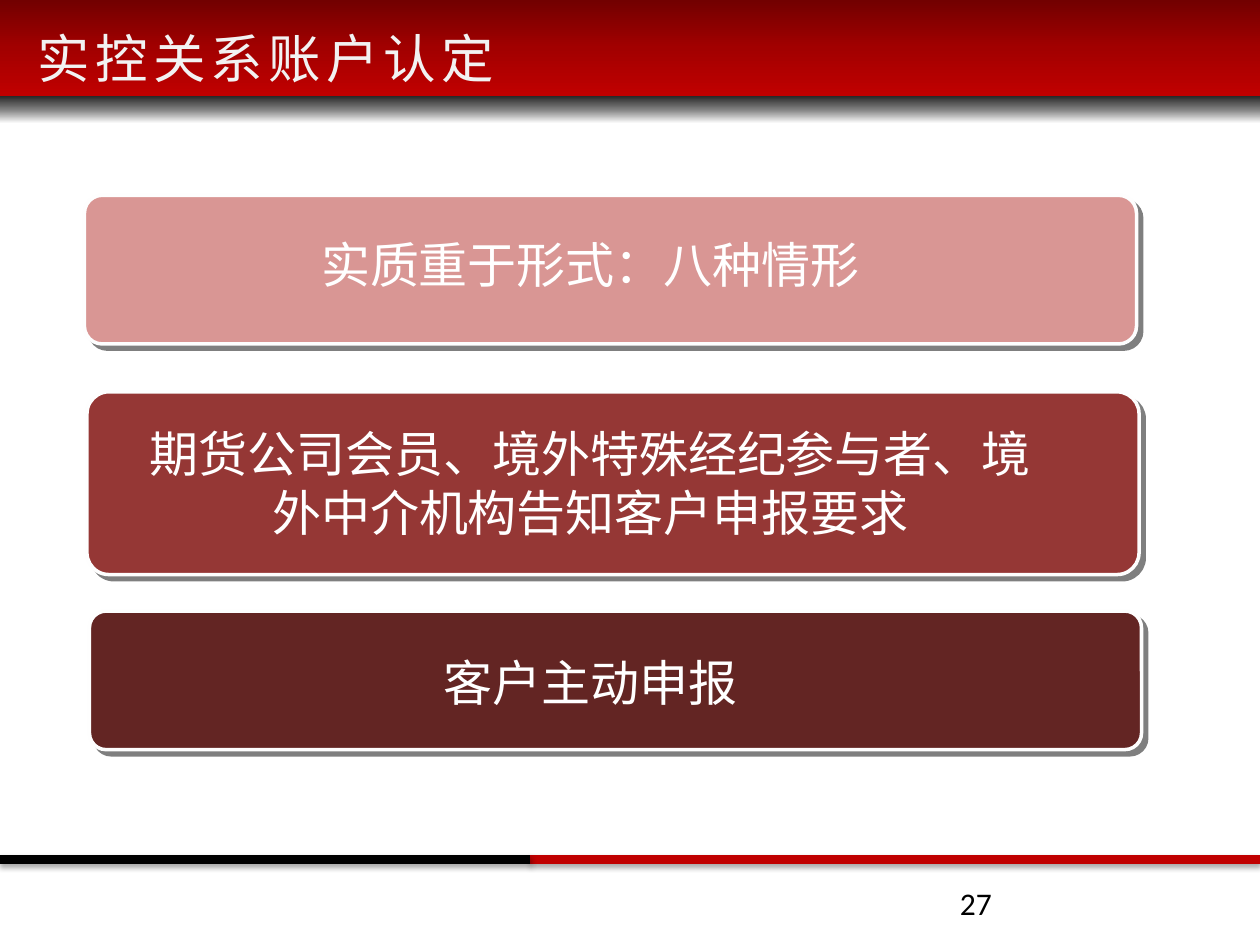
"""Build the slide on identifying accounts under common actual control."""
from lxml.etree import SubElement
from copy import deepcopy
from pptx import Presentation
from pptx.dml.color import RGBColor
from pptx.enum.shapes import MSO_CONNECTOR as CONN, MSO_SHAPE as SHAPE
from pptx.enum.text import MSO_ANCHOR as ANCHOR, PP_ALIGN as ALIGN
from pptx.oxml.ns import qn
from pptx.util import Inches, Pt

BLACK = RGBColor(0, 0, 0)
WHITE = RGBColor(255, 255, 255)
OFF_WHITE = RGBColor(0xFE, 0xFE, 0xFE)
PALE = RGBColor(0xF2, 0xF2, 0xF2)
RED = RGBColor(0xC0, 0, 0)
MID_RED = RGBColor(0xA2, 0, 0)
DARK_RED = RGBColor(0x72, 0, 0)
CHARCOAL = RGBColor(0x26, 0x26, 0x26)
GREY = RGBColor(0x80, 0x80, 0x80)
ROSE = RGBColor(0xD9, 0x96, 0x94)
BRICK = RGBColor(0x95, 0x37, 0x35)
MAROON = RGBColor(0x63, 0x25, 0x23)
CJK = "Noto Sans CJK SC"

prs = Presentation()
prs.slide_width, prs.slide_height = Inches(10), Inches(7.5)
COL, ROW = prs.slide_width / 100, prs.slide_height / 75
slide = prs.slides.add_slide(prs.slide_layouts[5])
shapes = slide.shapes


def add_shadow(sp, alpha, blur, dist, angle):
    effects = SubElement(sp._element.spPr, qn("a:effectLst"))
    shadow = SubElement(effects, qn("a:outerShdw"), blurRad=str(Pt(blur)),
                        dist=str(Pt(dist)), dir=str(angle * 60000),
                        algn="tl", rotWithShape="0")
    color = SubElement(shadow, qn("a:srgbClr"), val=str(BLACK))
    SubElement(color, qn("a:alpha"), val=str(alpha * 1000))


def set_text(sp, text, size, color, font=CJK, align=ALIGN.LEFT):
    tf = sp.text_frame
    tf.word_wrap = True
    tf.vertical_anchor = ANCHOR.TOP
    tf.text = text
    p = tf.paragraphs[0]
    p.alignment = align
    r = p.runs[0]
    r.font.size, r.font.name, r.font.color.rgb = Pt(size), font, color
    SubElement(r._r.get_or_add_rPr(), qn("a:ea"), typeface=font)
    return r


for top, height, colors in [(0, 7.6, (DARK_RED, MID_RED, RED)),
                            (7.6, 2.2, (CHARCOAL, GREY, WHITE))]:
    sp = shapes.add_shape(SHAPE.RECTANGLE, 0, int(top * ROW),
                          prs.slide_width, int(height * ROW))
    sp.shadow.inherit = False
    sp.line.fill.background()
    sp.fill.gradient()
    sp.fill.gradient_angle = 270
    stops = sp._element.spPr.find(".//" + qn("a:gsLst"))
    stops.append(deepcopy(stops[0]))
    for i, (stop, color) in enumerate(zip(sp.fill.gradient_stops, colors)):
        stop.color.rgb = color
        stop.position = i / 2

for start, end, color in [(42.1, 100, RED), (0, 42.1, BLACK)]:
    rule = shapes.add_connector(CONN.STRAIGHT, int(start * COL), int(68.2 * ROW),
                                int(end * COL), int(68.2 * ROW))
    rule.line.color.rgb = color
    rule.line.width = Pt(5)
    add_shadow(rule, 35, 3.1, 1.8, 90)

number = shapes.add_textbox(int(75.2 * COL), int(69.7 * ROW), int(23.3 * COL), int(4 * ROW))
set_text(number, "27", 18, BLACK, "Calibri")

panels = [
    (6.7, 15.5, 11.8, ROSE, 18.1, 5.7, "实质重于形式：八种情形"),
    (6.9, 31.1, 14.5, BRICK, 33.1, 10.4,
     "期货公司会员、境外特殊经纪参与者、境外中介机构告知客户申报要求"),
    (7.1, 48.5, 11, MAROON, 51.3, 5.7, "客户主动申报"),
]
for left, top, height, color, text_top, text_height, text in panels:
    sp = shapes.add_shape(SHAPE.ROUNDED_RECTANGLE, int(left * COL), int(top * ROW),
                          int(83.5 * COL), int(height * ROW))
    sp.adjustments[0] = 0.12
    sp.fill.solid()
    sp.fill.fore_color.rgb = color
    sp.line.color.rgb = OFF_WHITE
    sp.line.width = Pt(2)
    add_shadow(sp, 50, 0, 4.2, 45)
    label = shapes.add_textbox(int(9 * COL), int(text_top * ROW),
                               int(75.7 * COL), int(text_height * ROW))
    set_text(label, text, 28, WHITE, align=ALIGN.CENTER)

title = shapes.title
title.left, title.top = int(2 * COL), int(1.6 * ROW)
title.width, title.height = int(83 * COL), int(8.4 * ROW)
r = set_text(title, "实控关系账户认定", 30, PALE)
r._r.get_or_add_rPr().set("spc", "300")
shapes._spTree.append(title._element)

prs.save("out.pptx")
